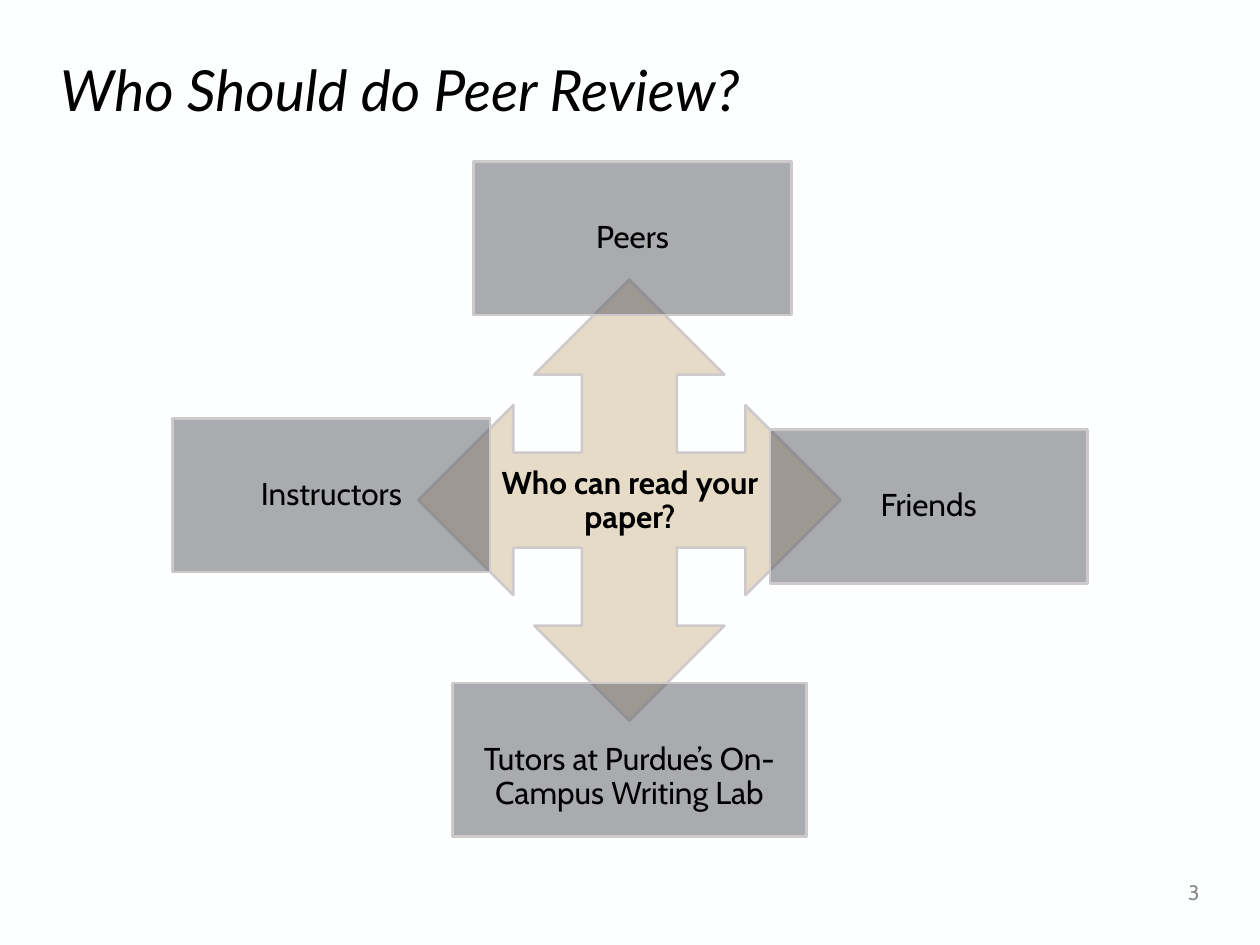
from lxml import etree
from pptx import Presentation
from pptx.dml.color import RGBColor
from pptx.enum.shapes import MSO_SHAPE
from pptx.enum.text import MSO_ANCHOR, PP_ALIGN
from pptx.oxml.ns import qn
from pptx.util import Inches, Pt

CENTER, LEFT, RIGHT = PP_ALIGN.CENTER, PP_ALIGN.LEFT, PP_ALIGN.RIGHT
MIDDLE = MSO_ANCHOR.MIDDLE
ARROW, PROCESS = MSO_SHAPE.QUAD_ARROW, MSO_SHAPE.FLOWCHART_PROCESS

BACKGROUND = RGBColor(0xFE, 0xFF, 0xFF)
BLACK = RGBColor(0, 0, 0)
GOLD = RGBColor(0xCF, 0xB9, 0x91)
STEEL = RGBColor(0x55, 0x58, 0x5F)
OUTLINE = RGBColor(0xCE, 0xCA, 0xCB)
NUMBER_GRAY = RGBColor(0x8C, 0x8C, 0x8C)

# Content: areas are left, top, width, height in inches
TITLE = "Who Should do Peer Review?"
QUESTION = "Who can read your paper?"
PAGE_NUMBER = "3"
ARROW_AREA = (3.32, 2.22, 3.35, 3.5)
READER_HEIGHT = 1.22
INSET = 0.03
# name, left, top, width, top inset
READERS = [
    ("Peers", 3.76, 1.28, 2.52, INSET),
    ("Friends", 6.11, 3.41, 2.52, INSET),
    ("Tutors at Purdue’s On-Campus Writing Lab", 3.59, 5.42, 2.81, 0.3),
    ("Instructors", 1.37, 3.32, 2.52, INSET),
]


def write(shape, text, size, align=CENTER, font="Cabin", color=BLACK,
          bold=False, italic=False, spacing=0.9, inset=INSET, top_inset=INSET):
    frame = shape.text_frame
    frame.word_wrap = True
    frame.vertical_anchor = MIDDLE
    frame.margin_left = frame.margin_right = Inches(inset)
    frame.margin_top, frame.margin_bottom = Inches(top_inset), Inches(INSET)
    frame.text = text
    para = frame.paragraphs[0]
    para.alignment, para.line_spacing = align, spacing
    span = para.runs[0].font
    span.name, span.size, span.color.rgb = font, Pt(size), color
    span.bold, span.italic = bold, italic


def add_text(page, area, text, size, **style):
    box = page.shapes.add_textbox(*map(Inches, area))
    write(box, text, size, **style)


def add_translucent(page, kind, area, color):
    shape = page.shapes.add_shape(kind, *map(Inches, area))
    shape.shadow.inherit = False
    shape.fill.solid()
    shape.fill.fore_color.rgb = color
    shape.line.color.rgb = OUTLINE
    shape.line.width = Pt(1.5)
    fill_color = shape._element.spPr.find(qn("a:solidFill"))[0]
    etree.SubElement(fill_color, qn("a:alpha"), val="50000")
    return shape


def main():
    deck = Presentation()
    deck.slide_width, deck.slide_height = Inches(10), Inches(7.5)
    page = deck.slides.add_slide(deck.slide_layouts[6])
    page.background.fill.solid()
    page.background.fill.fore_color.rgb = BACKGROUND

    # Title and page number
    add_text(page, (0.38, 0.42, 9.24, 0.64), TITLE, 32.4,
             align=LEFT, font="Lato", italic=True, inset=0.1)
    add_text(page, (8.42, 6.88, 1.2, 0.4), PAGE_NUMBER, 12,
             align=RIGHT, color=NUMBER_GRAY, spacing=1, inset=0.1)

    # Four-way arrow with the question in its middle
    add_translucent(page, ARROW, ARROW_AREA, GOLD)
    add_text(page, (3.7, 3.6, 2.6, 0.75), QUESTION, 18, bold=True)

    # Possible readers around the arrow
    for name, left, top, width, top_inset in READERS:
        area = (left, top, width, READER_HEIGHT)
        reader = add_translucent(page, PROCESS, area, STEEL)
        write(reader, name, 18, top_inset=top_inset)

    deck.save("out.pptx")


if __name__ == "__main__":
    main()
